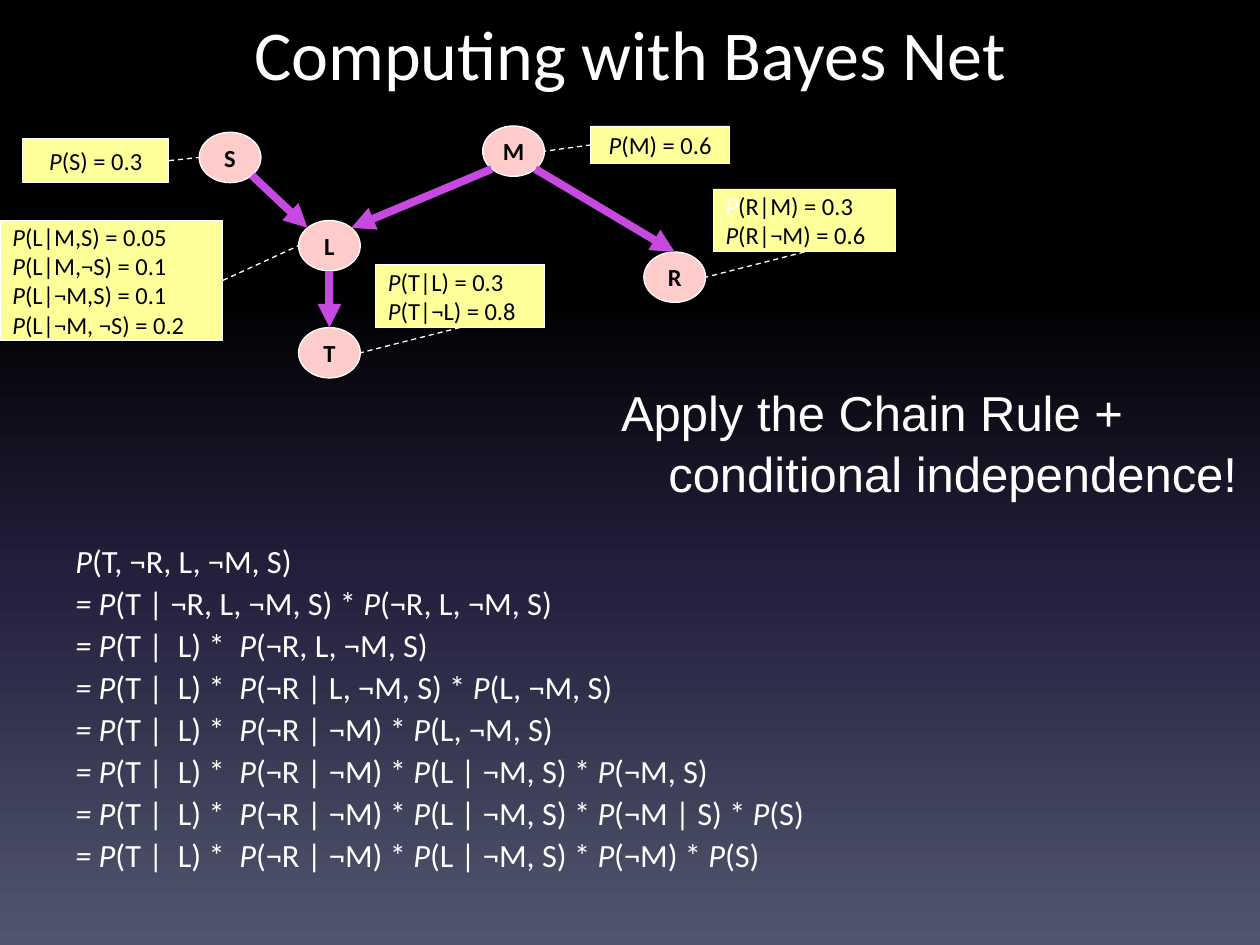
from dataclasses import dataclass
from math import cos, pi, sin

from lxml import etree
from pptx import Presentation
from pptx.dml.color import RGBColor
from pptx.enum.dml import MSO_LINE
from pptx.enum.shapes import MSO_CONNECTOR, MSO_SHAPE
from pptx.enum.text import MSO_ANCHOR, PP_ALIGN
from pptx.oxml.ns import qn
from pptx.util import Pt

STRAIGHT = MSO_CONNECTOR.STRAIGHT
OVAL, RECTANGLE = MSO_SHAPE.OVAL, MSO_SHAPE.RECTANGLE
TOP, MIDDLE = MSO_ANCHOR.TOP, MSO_ANCHOR.MIDDLE
LEFT, CENTER = PP_ALIGN.LEFT, PP_ALIGN.CENTER
DASH = MSO_LINE.DASH
SIDE_TOP, SIDE_LEFT, SIDE_BOTTOM, SIDE_RIGHT = range(4)


@dataclass(frozen=True)
class Theme:
    font: str = "Calibri"
    callout_font: str = "Arial"
    light: str = "FFFFFF"
    dark: str = "000000"
    node: str = "FFCCCC"
    table: str = "FFFF99"
    arrow: str = "C649E0"
    # Background stops: position in percent, colour
    background: tuple = ((0, "000000"), (31, "000000"), (62, "24213E"), (100, "51566D"))
    title_size: float = 40
    callout_size: float = 28
    formula_size: float = 18.5
    label_size: float = 14


THEME = Theme()
HANGING = Pt(27)
NODE_WIDTH, NODE_HEIGHT = 35.3, 28.8

# Node positions within the network
NODES = {
    "S": (113.8, 3.6),
    "M": (275.8, 0),
    "R": (367.9, 72),
    "L": (170.6, 54),
    "T": (170.6, 115.2),
}
# Probability tables: node -> box, alignment, formulas, side joined,
# and the angle at which the dashed line meets the node
TABLES = {
    "S": ((13, 7.2, 83.5, 25.2), CENTER, ["P(S) = 0.3"], SIDE_RIGHT, 180),
    "M": ((337.7, 0, 79.2, 21.6), CENTER, ["P(M) = 0.6"], SIDE_LEFT, 0),
    "R": ((407.5, 36, 104.4, 36), LEFT,
          ["P(R|M) = 0.3", "P(R|¬M) = 0.6"], SIDE_BOTTOM, 0),
    "T": ((214.6, 79.2, 96.5, 36), LEFT,
          ["P(T|L) = 0.3", "P(T|¬L) = 0.8"], SIDE_BOTTOM, 0),
    "L": ((0, 54, 127.4, 68.4), LEFT,
          ["P(L|M,S) = 0.05", "P(L|M,¬S) = 0.1",
           "P(L|¬M,S) = 0.1", "P(L|¬M, ¬S) = 0.2"], SIDE_RIGHT, 180),
}
# Arrows: parent, angle on its rim, child, angle on its rim
ARROWS = [("S", 45, "L", 225), ("M", 135, "L", 315),
          ("M", 45, "R", 270), ("L", 90, "T", 270)]

T_GIVEN_L = "= P(T |  L) *  "
R_REDUCED = T_GIVEN_L + "P(¬R | ¬M) * "
L_REDUCED = R_REDUCED + "P(L | ¬M, S) * "
DERIVATION = [
    "P(T, ¬R, L, ¬M, S)",
    "= P(T | ¬R, L, ¬M, S) * P(¬R, L, ¬M, S)",
    T_GIVEN_L + "P(¬R, L, ¬M, S)",
    T_GIVEN_L + "P(¬R | L, ¬M, S) * P(L, ¬M, S)",
    R_REDUCED + "P(L, ¬M, S)",
    L_REDUCED + "P(¬M, S)",
    L_REDUCED + "P(¬M | S) * P(S)",
    L_REDUCED + "P(¬M) * P(S)",
]


def rgb(color):
    return RGBColor.from_string(color)


def set_font(paragraph, size, color, name=THEME.font):
    font = paragraph.font
    font.name, font.size, font.color.rgb = name, Pt(size), rgb(color)


def set_hanging(paragraph):
    properties = paragraph._p.get_or_add_pPr()
    properties.set("marL", str(HANGING))
    properties.set("indent", str(-HANGING))


def write_formulas(frame, formulas, size, color, align=LEFT):
    """One formula a paragraph, with every P (and a leading "= ") in italics."""
    for index, formula in enumerate(formulas):
        paragraph = frame.paragraphs[0] if index == 0 else frame.add_paragraph()
        paragraph.alignment = align
        set_font(paragraph, size, color)
        lead, *arguments = formula.split("P")
        for argument in arguments:
            symbol = paragraph.add_run()
            symbol.text = lead + "P"
            symbol.font.italic = True
            paragraph.add_run().text = argument
            lead = ""


def paint_background(slide):
    fill = slide.background.fill
    fill.gradient()
    fill.gradient_angle = 270
    stops = next(slide.element.iter(qn("a:gsLst")))
    for stop in list(stops):
        stops.remove(stop)
    for position, color in THEME.background:
        stop = etree.SubElement(stops, qn("a:gs"), pos=str(position * 1000))
        etree.SubElement(stop, qn("a:srgbClr"), val=color)


def place_title(slide, left, top, width, height):
    title = slide.shapes.title
    title.left, title.top, title.width, title.height = map(Pt, (left, top, width, height))
    frame = title.text_frame
    frame.text = "Computing with Bayes Net"
    frame.vertical_anchor = TOP
    frame.margin_top = Pt(6)
    frame.paragraphs[0].alignment = CENTER
    set_font(frame.paragraphs[0], THEME.title_size, THEME.light)


def add_panel(slide, kind, box, fill, line_width):
    panel = slide.shapes.add_shape(kind, *map(Pt, box))
    panel.shadow.inherit = False
    panel.fill.solid()
    panel.fill.fore_color.rgb = rgb(fill)
    panel.line.color.rgb = rgb(THEME.light)
    panel.line.width = Pt(line_width)
    panel.text_frame.vertical_anchor = MIDDLE
    return panel


def add_line(slide, start, end, color, width):
    line = slide.shapes.add_connector(STRAIGHT, *map(Pt, (*start, *end)))
    line.line.color.rgb = rgb(color)
    line.line.width = Pt(width)
    etree.SubElement(line._element.spPr, qn("a:effectLst"))
    return line


def place_network(slide, left, top):
    def rim(name, angle):
        x, y = NODES[name]
        return (left + x + NODE_WIDTH / 2 * (1 + cos(angle * pi / 180)),
                top + y + NODE_HEIGHT / 2 * (1 + sin(angle * pi / 180)))

    # Nodes
    for name, (x, y) in NODES.items():
        node = add_panel(slide, OVAL, (left + x, top + y, NODE_WIDTH, NODE_HEIGHT),
                         THEME.node, 0.75)
        node.text_frame.word_wrap = False
        label = node.text_frame.paragraphs[0]
        label.text = name
        label.alignment = CENTER
        set_font(label, THEME.label_size, THEME.dark)
        label.font.bold = True

    # Probability tables
    tables = {}
    for name, ((x, y, width, height), align, formulas, _, _) in TABLES.items():
        table = add_panel(slide, RECTANGLE, (left + x, top + y, width, height),
                          THEME.table, 0.5)
        write_formulas(table.text_frame, formulas, THEME.label_size, THEME.dark, align)
        tables[name] = table
    first_symbol = tables["R"].text_frame.paragraphs[0].runs[0]
    first_symbol.font.color.rgb = rgb(THEME.light)

    # Dependency arrows
    for parent, start, child, end in ARROWS:
        arrow = add_line(slide, rim(parent, start), rim(child, end), THEME.arrow, 4.5)
        etree.SubElement(arrow.line._get_or_add_ln(), qn("a:tailEnd"), type="triangle")

    # Dashed lines from tables to nodes
    for name, (_, _, _, side, angle) in TABLES.items():
        node_point = rim(name, angle)
        link = add_line(slide, node_point, node_point, THEME.light, 0.75)
        link.line.dash_style = DASH
        link.begin_connect(tables[name], side)


def place_derivation(slide, left, top, width, height):
    frame = slide.shapes.add_textbox(*map(Pt, (left, top, width, height))).text_frame
    frame.word_wrap = True
    frame.vertical_anchor = MIDDLE
    write_formulas(frame, DERIVATION, THEME.formula_size, THEME.light)
    for paragraph in frame.paragraphs:
        paragraph.line_spacing = 1.08
        set_hanging(paragraph)


def place_callout(slide, left, top, width, height):
    frame = slide.shapes.add_textbox(*map(Pt, (left, top, width, height))).text_frame
    frame.word_wrap = True
    advice = frame.paragraphs[0]
    advice.text = "Apply the Chain Rule + conditional independence!"
    advice.line_spacing = 1.05
    set_hanging(advice)
    set_font(advice, THEME.callout_size, THEME.light, THEME.callout_font)


def main():
    deck = Presentation()
    deck.slide_width, deck.slide_height = Pt(720), Pt(540)
    slide = deck.slides.add_slide(deck.slide_layouts[5])
    paint_background(slide)
    place_title(slide, 36, 0, 648, 68.4)
    place_derivation(slide, 36, 297.4, 657.4, 212.4)
    place_network(slide, 0, 72)
    place_callout(slide, 347.8, 213.1, 372.2, 74.9)
    deck.save("out.pptx")


if __name__ == "__main__":
    main()
